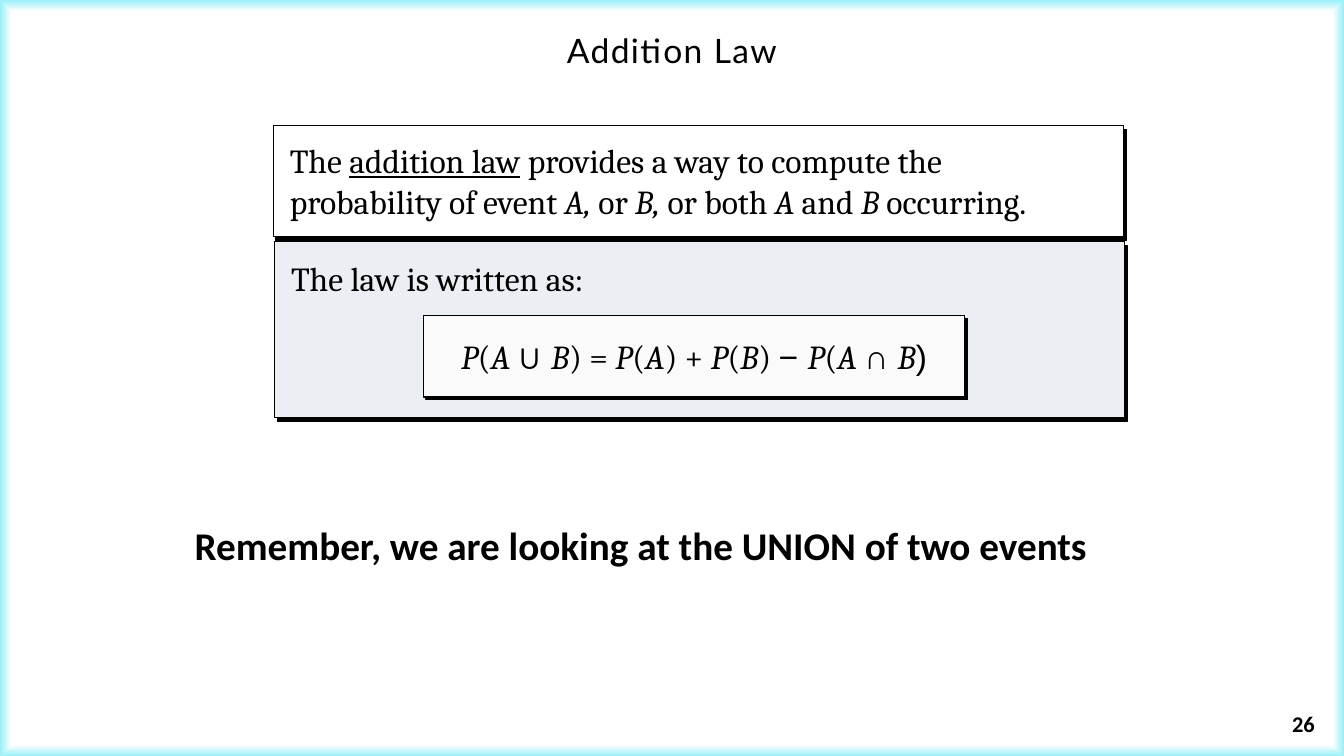
from lxml.etree import SubElement as Sub
from pptx import Presentation
from pptx.dml.color import RGBColor
from pptx.enum.shapes import MSO_SHAPE as Kind
from pptx.enum.text import MSO_ANCHOR as Anchor, MSO_AUTO_SIZE as Auto, PP_ALIGN as Align
from pptx.oxml.ns import qn
from pptx.util import Inches, Pt

CELL = Inches(1 / 12)
COLS, ROWS = 160, 90
MARKS = {
    "": {},
    "i": {"italic": True},
    "u": {"underline": True},
    "a": {"name": "Arial"},
}


def color(text):
    return RGBColor.from_string(text)


def write(shape, lines, style, align=Align.LEFT):
    frame = shape.text_frame
    for row, line in enumerate(lines):
        para = frame.add_paragraph() if row else frame.paragraphs[0]
        para.alignment = align
        for text, mark in line:
            run = para.add_run()
            run.text = text
            run.font.color.rgb = color("000000")
            for key, value in {**style, **MARKS[mark]}.items():
                setattr(run.font, key, value)


deck = Presentation()
deck.slide_width, deck.slide_height = COLS * CELL, ROWS * CELL
slide = deck.slides.add_slide(deck.slide_layouts[5])

fill = slide.background.fill
fill.gradient()
grad = slide.background._cSld.find(".//" + qn("a:gradFill"))
for child in list(grad):
    grad.remove(child)
stops = Sub(grad, qn("a:gsLst"))
for place, tint in [(97, "FFFFFF"), (100, "98EFF8"), (100, "98EFF8"), (100, "C7D5ED")]:
    stop = Sub(stops, qn("a:gs"), pos=str(place * 1000))
    Sub(stop, qn("a:srgbClr"), val=tint)
path = Sub(grad, qn("a:path"), path="shape")
Sub(path, qn("a:fillToRect"), {side: "50000" for side in "ltrb"})

title = slide.shapes.title
place = {"left": 29, "top": 2.15, "width": 102, "height": 7.7}
for key, value in place.items():
    setattr(title, key, int(value * CELL))
title.text_frame.auto_size = Auto.NONE
title.text_frame.vertical_anchor = Anchor.MIDDLE
write(title, [[("Addition Law", "")]], {"name": "Lato", "size": Pt(24)}, Align.CENTER)
title.text_frame.paragraphs[0].runs[0].font._element.set("spc", "100")

intro = [
    [("The ", ""), ("addition law", "u"), (" provides a way to compute the", "")],
    [("probability of event ", ""), ("A,", "i"), (" or ", ""), ("B,", "i"),
     (" or both ", ""), ("A", "i"), (" and ", ""), ("B ", "i"), ("occurring.", "")],
]
lead = [[("The law is written as:", "")]]
law = [[
    ("P", "i"), ("(", ""), ("A ", "i"), ("∪ ", "a"), ("B", "i"), (") = ", ""),
    ("P", "i"), ("(", ""), ("A", "i"), (") + ", ""),
    ("P", "i"), ("(", ""), ("B", "i"), (") ", ""), ("− ", "a"),
    ("P", "i"), ("(", ""), ("A ", "i"), ("∩ ", "a"), ("B", "i"), (")", "a"),
]]
panels = [
    (intro, (32.5, 14.9, 101.25, 13.2), "FFFFFF", 0.5, (3.6, 56), Anchor.MIDDLE, Align.LEFT),
    (lead, (32.65, 28.7, 101.25, 21), "EBEEF2", 0.5, (3.6, 56), Anchor.TOP, Align.LEFT),
    (law, (50.4, 37.55, 64.45, 9.7), "FAFAFA", 1, (2.8, 45), Anchor.MIDDLE, Align.CENTER),
]
for lines, spot, tint, width, (reach, angle), anchor, align in panels:
    box = slide.shapes.add_shape(Kind.RECTANGLE, *[int(n * CELL) for n in spot])
    box.fill.solid()
    box.fill.fore_color.rgb = color(tint)
    box.line.color.rgb = color("000000")
    box.line.width = Pt(width)
    box.shadow.inherit = False
    shade = Sub(box._element.spPr.find(qn("a:effectLst")), qn("a:outerShdw"),
                blurRad="0", dist=str(Pt(reach)), dir=str(angle * 60000),
                algn="ctr", rotWithShape="0")
    Sub(shade, qn("a:srgbClr"), val="000000")
    look = {"word_wrap": True, "vertical_anchor": anchor,
            "margin_left": 2 * CELL, "margin_right": 2 * CELL, "margin_top": 2 * CELL,
            "margin_bottom": 2 * CELL}
    for key, value in look.items():
        setattr(box.text_frame, key, value)
    write(box, lines, {"name": "Cambria", "size": Pt(24)}, align)

notes = [
    ("Remember, we are looking at the UNION of two events", (22, 61.45, 109.1, 6.85), 28),
    ("26", (152.65, 83.9, 5.65, 4.45), 16),
]
for text, spot, size in notes:
    box = slide.shapes.add_textbox(*[int(n * CELL) for n in spot])
    box.text_frame.word_wrap = False
    box.text_frame.auto_size = Auto.SHAPE_TO_FIT_TEXT
    write(box, [[(text, "")]], {"name": "Calibri", "size": Pt(size), "bold": True})

deck.save("out.pptx")
